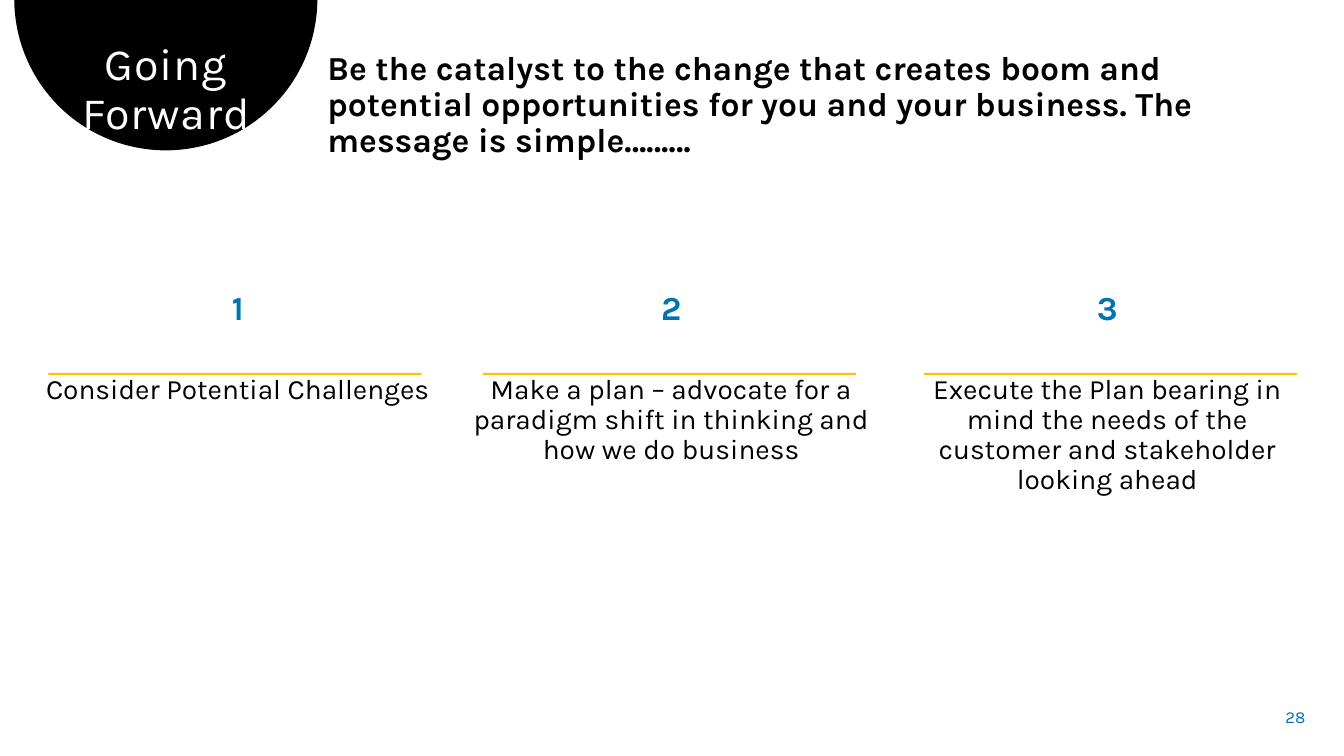
import math

from pptx import Presentation
from pptx import util as u
from pptx.dml.color import RGBColor
from pptx.enum import shapes, text

COLORS = {"black": "000000", "white": "FFFFFF", "blue": "0074AF", "gold": "FFC000"}
CENTER = text.PP_ALIGN.CENTER


def paint(shape, color):
    """Give a shape a flat fill with no outline or shadow."""
    shape.fill.solid()
    shape.fill.fore_color.rgb = RGBColor.from_string(COLORS[color])
    shape.line.fill.background()
    shape.shadow.inherit = False


def add_text(box, paragraphs):
    """Add a text box; each paragraph is (words, size, color, bold, format)."""
    shape = slide.shapes.add_textbox(*map(u.Cm, box))
    frame = shape.text_frame
    frame.word_wrap = True
    for index, (words, size, color, bold, formatting) in enumerate(paragraphs):
        paragraph = frame.add_paragraph() if index else frame.paragraphs[0]
        for name, value in formatting.items():
            setattr(paragraph, name, value)
        run = paragraph.add_run()
        run.text = words
        for name, value in {"name": "Karla", "size": u.Pt(size), "bold": bold}.items():
            setattr(run.font, name, value)
        run.font.color.rgb = RGBColor.from_string(COLORS[color])
    return shape


presentation = Presentation()
presentation.slide_width = u.Cm(33.87)
presentation.slide_height = u.Cm(19.05)
slide = presentation.slides.add_slide(presentation.slide_layouts[6])

# Half disc hanging from the top edge
center_x, center_y, radius = 4.18, -0.03, 3.82
arc = []
for degree in range(0, 181, 2):
    angle = math.radians(degree)
    arc.append((u.Cm(center_x + radius * math.cos(angle)),
                u.Cm(max(0, center_y + radius * math.sin(angle)))))
builder = slide.shapes.build_freeform(*arc[0])
builder.add_line_segments(arc[1:], close=True)
paint(builder.convert_to_shape(), "black")

# Title and opening message
title = add_text((0.89, 0.94, 6.6, 2.72), [
    ("Going Forward", 32, "white", False, {"alignment": CENTER, "line_spacing": 0.9}),
])
title.text_frame.paragraphs[0].runs[0].font._element.set("spc", "60")
add_text((8, 1.17, 25.22, 4.37), [
    ("Be the catalyst to the change that creates boom and potential opportunities "
     "for you and your business. The message is simple………", 24, "black", True,
     {"line_spacing": 0.9, "space_before": u.Pt(10)}),
])

# Three numbered steps: text left, text width, rule left, words
steps = [
    (0.84, 10.31, 1.22, "Consider Potential Challenges"),
    (11.58, 10.67, 12.17, "Make a plan – advocate for a paradigm shift in thinking "
                          "and how we do business"),
    (22.66, 10.49, 23.29, "Execute the Plan bearing in mind the needs of the customer "
                          "and stakeholder looking ahead"),
]
step_format = {"alignment": CENTER, "line_spacing": 0.9, "space_before": u.Pt(10)}
for number, (left, width, rule_left, words) in enumerate(steps, start=1):
    add_text((left, 7.21, width, 4.7), [
        (str(number), 24, "blue", True, {**step_format, "space_after": u.Pt(24)}),
        (words, 20, "black", False, {**step_format, "space_after": u.Pt(12)}),
    ])
    rule = slide.shapes.add_shape(shapes.MSO_SHAPE.RECTANGLE, u.Cm(rule_left),
                                  u.Cm(9.4), u.Cm(9.4), u.Cm(0.05))
    paint(rule, "gold")

# Page number
page_number = add_text((31.75, 17.55, 1.4, 1.02), [
    ("28", 12, "blue", False, {"alignment": text.PP_ALIGN.RIGHT}),
])
page_number.text_frame.vertical_anchor = text.MSO_ANCHOR.MIDDLE

presentation.save("out.pptx")
